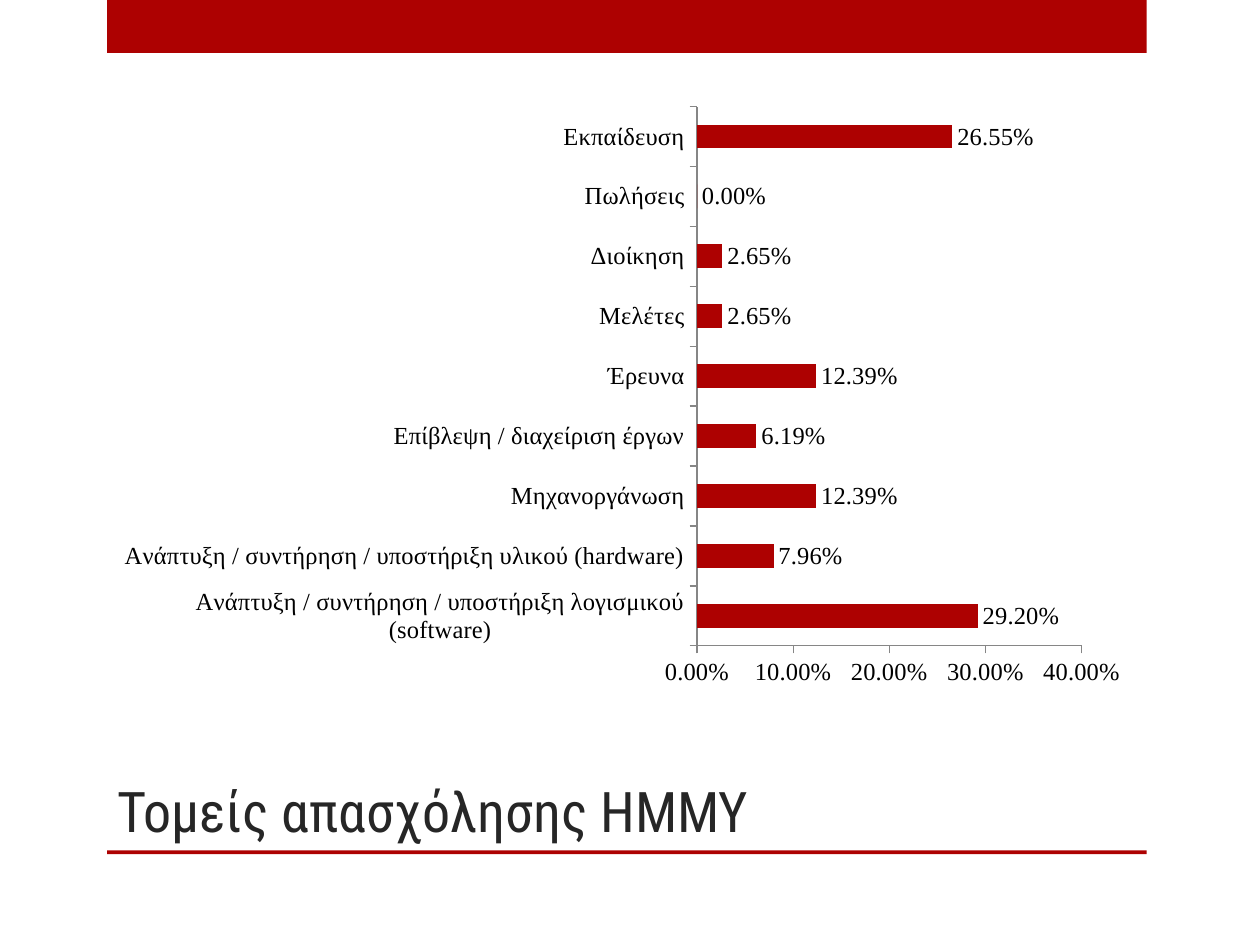
from lxml.etree import SubElement
from pptx import Presentation
from pptx.chart.data import CategoryChartData
from pptx.dml.color import RGBColor
from pptx.enum.chart import XL_CHART_TYPE, XL_LABEL_POSITION, XL_TICK_MARK
from pptx.enum.shapes import MSO_SHAPE
from pptx.enum.text import MSO_ANCHOR, PP_ALIGN
from pptx.oxml.ns import qn
from pptx.util import Inches, Pt

COLORS = {"accent": "AD0101", "title": "262626", "text": "000000", "axis": "868686"}
TITLE_FONT = "Roboto Condensed"
CHART_FONT = "Times New Roman"
PERCENT = "0.00%"

SECTORS = {
    "Ανάπτυξη / συντήρηση / υποστήριξη λογισμικού (software)": 0.292,
    "Ανάπτυξη / συντήρηση / υποστήριξη υλικού (hardware)": 0.0796,
    "Μηχανοργάνωση": 0.1239,
    "Επίβλεψη / διαχείριση έργων": 0.0619,
    "Έρευνα": 0.1239,
    "Μελέτες": 0.0265,
    "Διοίκηση": 0.0265,
    "Πωλήσεις": 0,
    "Εκπαίδευση": 0.2655,
}


def color(name):
    return RGBColor.from_string(COLORS[name])


class SlideBuilder:
    def __init__(self, presentation):
        self.slide = presentation.slides.add_slide(presentation.slide_layouts[5])

    def bar(self, left, top, width, height):
        shape = self.slide.shapes.add_shape(
            MSO_SHAPE.RECTANGLE, Inches(left), Inches(top), Inches(width), Inches(height))
        shape.shadow.inherit = False
        shape.fill.solid()
        shape.fill.fore_color.rgb = color("accent")
        shape.line.fill.background()

    def title(self, text, left, top, width, height):
        shape = self.slide.shapes.title
        shape.left, shape.top = Inches(left), Inches(top)
        shape.width, shape.height = Inches(width), Inches(height)
        text_frame = shape.text_frame
        text_frame.text = text
        text_frame.vertical_anchor = MSO_ANCHOR.BOTTOM
        paragraph = text_frame.paragraphs[0]
        paragraph.alignment = PP_ALIGN.LEFT
        self.style_font(paragraph.runs[0].font, 32, TITLE_FONT, "title")

    def bar_chart(self, values, left, top, width, height, plot):
        data = CategoryChartData(number_format=PERCENT)
        data.categories = list(values)
        data.add_series("Series 1", list(values.values()))
        chart = self.slide.shapes.add_chart(
            XL_CHART_TYPE.BAR_CLUSTERED, Inches(left), Inches(top),
            Inches(width), Inches(height), data).chart
        chart.has_legend = False
        chart.has_title = False
        self.style_font(chart.font, 18, CHART_FONT, "text")
        for axis in (chart.category_axis, chart.value_axis):
            self.style_axis(axis)
        value_axis = chart.value_axis
        value_axis.minimum_scale = 0
        value_axis.maximum_scale = 0.4
        value_axis.major_unit = 0.1
        value_axis.tick_labels.number_format = PERCENT
        value_axis.tick_labels.number_format_is_linked = False
        self.style_series(chart.plots[0])
        self.place_plot(chart, plot)

    def style_font(self, font, size, name, color_name):
        font.size = Pt(size)
        font.name = name
        font.bold = False
        font.color.rgb = color(color_name)

    def style_axis(self, axis):
        axis.has_major_gridlines = False
        axis.major_tick_mark = XL_TICK_MARK.OUTSIDE
        axis.minor_tick_mark = XL_TICK_MARK.NONE
        axis.format.line.color.rgb = color("axis")
        self.style_font(axis.tick_labels.font, 14, CHART_FONT, "text")

    def style_series(self, plot):
        plot.gap_width = 150
        plot.vary_by_categories = False
        series = plot.series[0]
        series.invert_if_negative = False
        series.format.fill.solid()
        series.format.fill.fore_color.rgb = color("accent")
        labels = series.data_labels
        labels.show_value = True
        labels.number_format = PERCENT
        labels.number_format_is_linked = False
        labels.position = XL_LABEL_POSITION.OUTSIDE_END
        self.style_font(labels.font, 14, CHART_FONT, "text")

    def place_plot(self, chart, plot):
        plot_area = chart.plots[0]._element.getparent()
        layout = plot_area.find(qn("c:layout"))
        if layout is None:
            layout = SubElement(plot_area, qn("c:layout"))
            plot_area.insert(0, layout)
        manual = SubElement(layout, qn("c:manualLayout"))
        settings = {"layoutTarget": "inner", "xMode": "edge", "yMode": "edge", **plot}
        for tag, value in settings.items():
            SubElement(manual, qn(f"c:{tag}")).set("val", str(value))


def main():
    presentation = Presentation()
    presentation.slide_width = Inches(10)
    presentation.slide_height = Inches(7.5)
    builder = SlideBuilder(presentation)
    builder.bar(0.85, 0, 8.25, 0.42)
    builder.bar(0.85, 6.75, 8.25, 0.03)
    builder.title("Τομείς απασχόλησης ΗΜΜΥ", 0.83, 5.64, 7.42, 1.11)
    builder.bar_chart(SECTORS, 0.83, 0.75, 8.25, 4.81,
                      {"x": 0.57, "y": 0.02, "w": 0.37, "h": 0.89})
    presentation.save("out.pptx")


if __name__ == "__main__":
    main()
